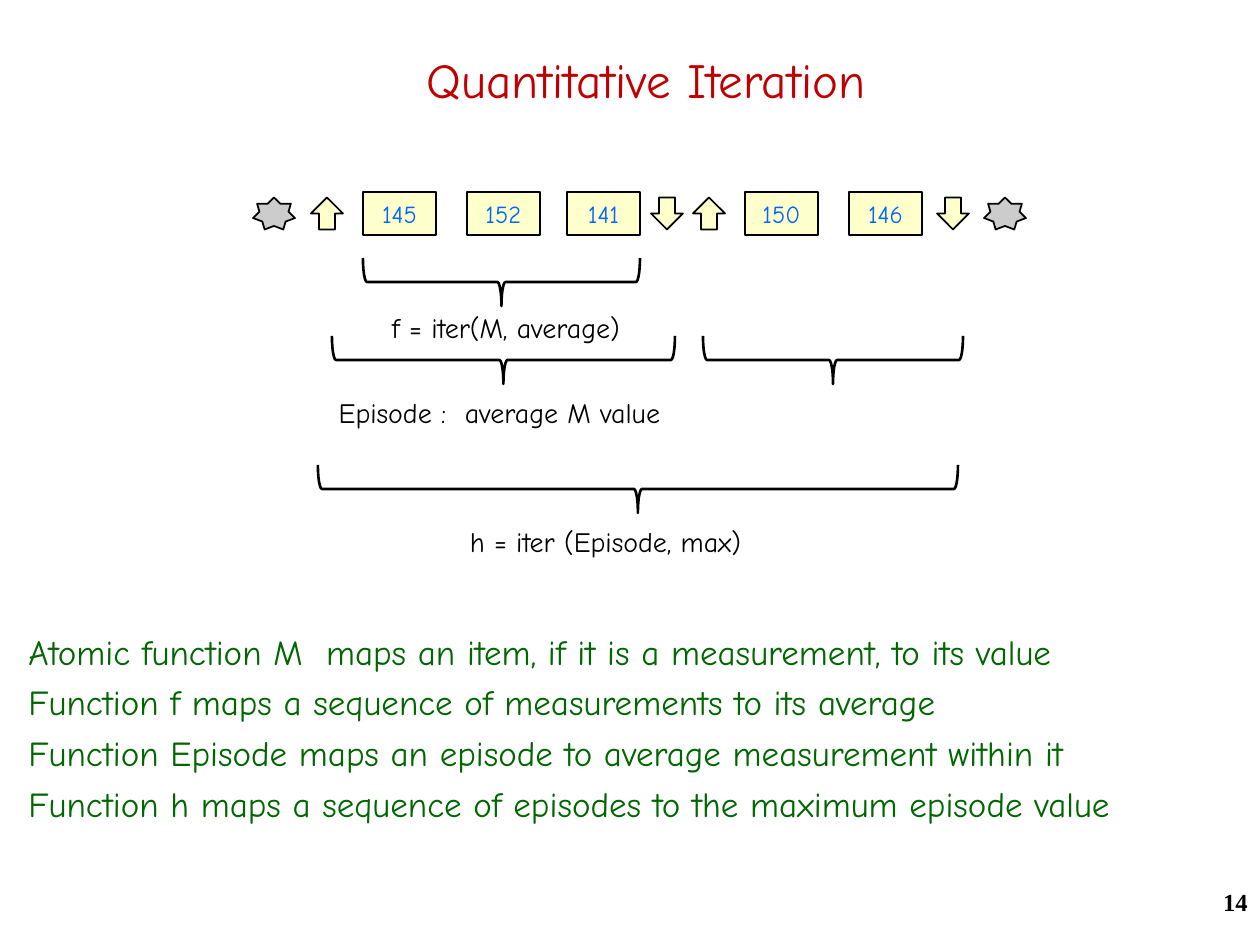
from pptx import Presentation
from pptx.dml.color import RGBColor
from pptx.enum.shapes import MSO_SHAPE
from pptx.enum.text import MSO_ANCHOR, PP_ALIGN
from pptx.util import Pt

PX = 914400 / 126

RED = RGBColor(0xC0, 0x00, 0x00)
GREEN = RGBColor(0x00, 0x66, 0x00)
BLUE = RGBColor(0x00, 0x66, 0xFF)
BLACK = RGBColor(0x00, 0x00, 0x00)
GRAY = RGBColor(0xCC, 0xCC, 0xCC)
CREAM = RGBColor(0xFF, 0xFF, 0xCC)
FONT = "Comic Neue"

# Sequence items: kind or value, and left edge within the row
ITEMS = [
    ("star", 0), ("up", 58), ("145", 110), ("152", 214), ("141", 314),
    ("down", 398), ("up", 440), ("150", 492), ("146", 596),
    ("down", 684), ("star", 731),
]
MARKS = {
    "star": (MSO_SHAPE.STAR_7_POINT, 42, GRAY),
    "up": (MSO_SHAPE.UP_ARROW, 32, CREAM),
    "down": (MSO_SHAPE.DOWN_ARROW, 32, CREAM),
}
NOTES = [
    "Atomic function M  maps an item, if it is a measurement, to its value",
    "Function f maps a sequence of measurements to its average",
    "Function Episode maps an episode to average measurement within it",
    "Function h maps a sequence of episodes to the maximum episode value",
]


def emu(*sizes):
    return [round(size * PX) for size in sizes]


def style(frame, size, color, align, font=FONT, bold=False):
    for para in frame.paragraphs:
        para.alignment = align
        for run in para.runs:
            run.font.name = font
            run.font.size = Pt(size)
            run.font.bold = bold
            run.font.color.rgb = color


def draw(shapes, kind, box, fill=None, width=1):
    shape = shapes.add_shape(kind, *emu(*box))
    shape.shadow.inherit = False
    if fill is None:
        shape.fill.background()
    else:
        shape.fill.solid()
        shape.fill.fore_color.rgb = fill
    shape.line.color.rgb = BLACK
    shape.line.width = Pt(width)
    return shape


def write(shapes, text, box, wrap=True):
    frame = shapes.add_textbox(*emu(*box)).text_frame
    frame.word_wrap = wrap
    frame.text = text
    return frame


def add_title(slide, box):
    title = slide.shapes.title
    title.left, title.top, title.width, title.height = emu(*box)
    frame = title.text_frame
    frame.text = "Quantitative Iteration"
    frame.vertical_anchor = MSO_ANCHOR.MIDDLE
    style(frame, 28, RED, PP_ALIGN.CENTER)


def add_row(slide, left, top, high):
    for item, shift in ITEMS:
        if item in MARKS:
            kind, wide, fill = MARKS[item]
            gap = (high - 32) / 2
            draw(slide.shapes, kind, (left + shift, top + gap, wide, 32), fill)
        else:
            box = (left + shift, top, 73, high)
            cell = draw(slide.shapes, MSO_SHAPE.RECTANGLE, box, CREAM)
            cell.text_frame.text = item
            style(cell.text_frame, 14, BLUE, PP_ALIGN.CENTER)


def add_brace(shapes, left, top, wide, high=48):
    # The box is turned a quarter so that the point faces down
    x = left + (wide - high) / 2
    y = top + (high - wide) / 2
    box = (x, y, high, wide)
    brace = draw(shapes, MSO_SHAPE.LEFT_BRACE, box, width=1.5)
    brace.rotation = 270


def add_span(slide, span, text, label):
    shapes = slide.shapes.add_group_shape().shapes
    frame = write(shapes, text, label, wrap=False)
    style(frame, 16, BLACK, PP_ALIGN.CENTER)
    add_brace(shapes, *span)


def add_notes(slide, box):
    frame = write(slide.shapes, "\n".join(NOTES), box)
    style(frame, 20, GREEN, PP_ALIGN.LEFT)
    for para in frame.paragraphs:
        para.space_before = Pt(5)


def add_number(slide, box):
    frame = write(slide.shapes, "14", box)
    style(frame, 14, BLACK, PP_ALIGN.RIGHT, "Times New Roman", True)


def main():
    deck = Presentation()
    deck.slide_width, deck.slide_height = emu(1260, 945)
    slide = deck.slides.add_slide(deck.slide_layouts[5])

    add_title(slide, (32, 42, 1228, 73))
    add_number(slide, (998, 881, 262, 63))
    add_notes(slide, (16, 624, 1239, 194))
    add_row(slide, 253, 192, 43)

    # Braces with their labels
    add_span(slide, (363, 258, 277), "f = iter(M, average)", (355, 304, 302, 47))
    add_span(slide, (332, 336, 343), "Episode :  average M value",
             (310, 389, 379, 47))
    add_brace(slide.shapes, 703, 336, 260)
    add_span(slide, (318, 465, 640), "h = iter (Episode, max)",
             (440, 518, 331, 47))

    deck.save("out.pptx")


if __name__ == "__main__":
    main()
